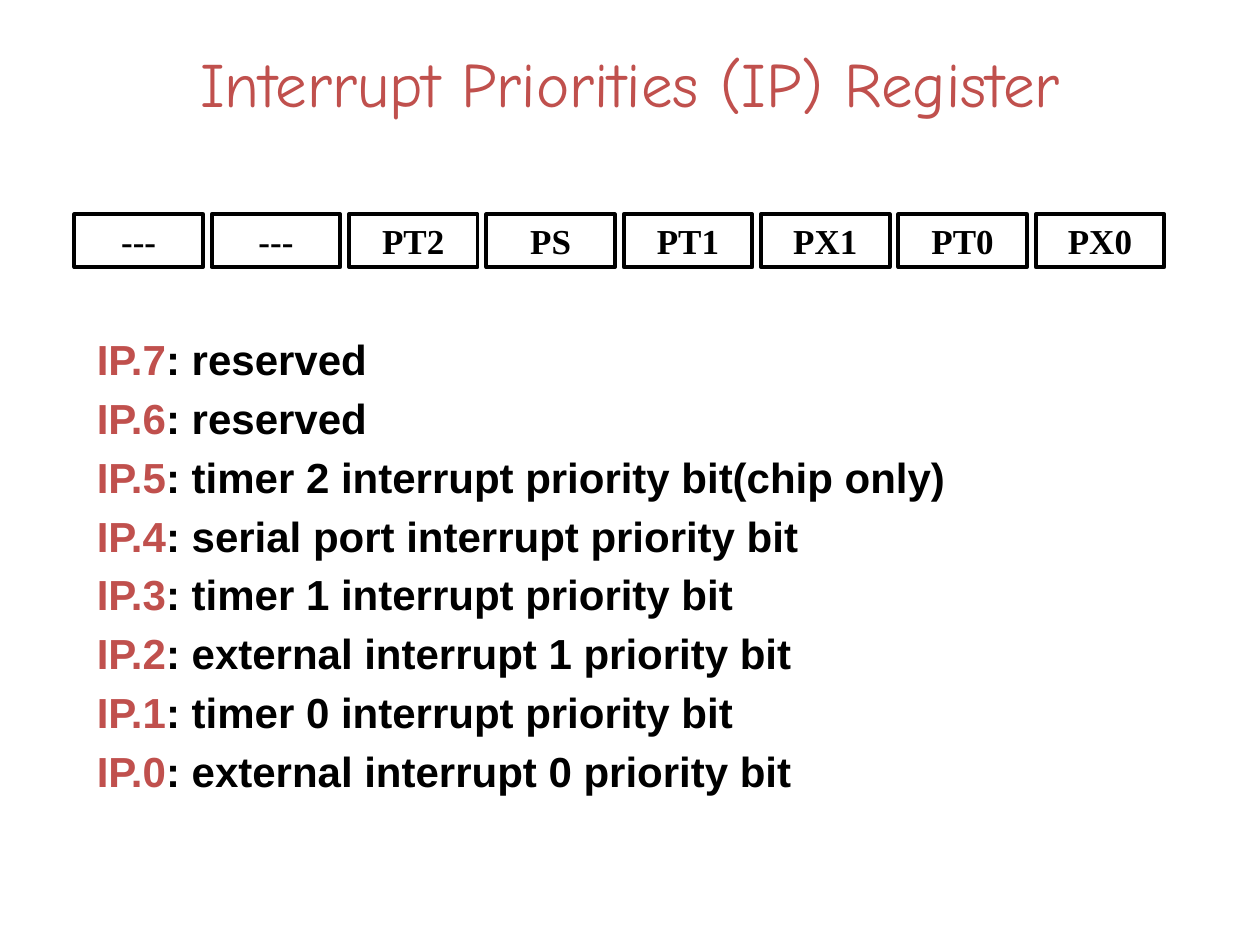
from lxml.etree import SubElement
from pptx import Presentation
from pptx.dml.color import RGBColor
from pptx.enum.shapes import MSO_SHAPE as Shape
from pptx.enum.text import MSO_ANCHOR as Anchor, PP_ALIGN as Align
from pptx.oxml.ns import qn
from pptx.util import Inches, Pt

# Content
TITLE = "Interrupt Priorities (IP) Register"
BITS = [  # from bit 7 down to bit 0: name, meaning
    ("---", "reserved"),
    ("---", "reserved"),
    ("PT2", "timer 2 interrupt priority bit(chip only)"),
    ("PS", "serial port interrupt priority bit"),
    ("PT1", "timer 1 interrupt priority bit"),
    ("PX1", "external interrupt 1 priority bit"),
    ("PT0", "timer 0 interrupt priority bit"),
    ("PX0", "external interrupt 0 priority bit"),
]

# Formats
COLORS = {"accent": "C0504D", "black": "000000"}
FONTS = {
    "title": {"name": "Comic Neue", "size": Pt(36), "bold": False},
    "bit": {"name": "Times New Roman", "size": Pt(20), "bold": True},
    "meaning": {"name": "Arial", "size": Pt(24), "bold": True},
}
CELL_LEFT, CELL_TOP, CELL_W, CELL_H, CELL_STEP = 0.59, 1.7, 1.02, 0.42, 1.09


def color(name):
    return RGBColor.from_string(COLORS[name])


def add_run(p, text, font, color_name):
    r = p.add_run()
    r.text = text
    for key, value in FONTS[font].items():
        setattr(r.font, key, value)
    r.font.color.rgb = color(color_name)


def space_before(p, percent):
    """Spacing relative to the line height."""
    pPr = p._p.get_or_add_pPr()
    SubElement(SubElement(pPr, qn("a:spcBef")), qn("a:spcPct")).set("val", str(percent * 1000))


def add_text_frame(slide, *box):
    tf = slide.shapes.add_textbox(*map(Inches, box)).text_frame
    tf.word_wrap = True
    return tf


prs = Presentation()
prs.slide_width, prs.slide_height = Inches(10), Inches(7.5)
slide = prs.slides.add_slide(prs.slide_layouts[6])

# Title
p = add_text_frame(slide, 0.5, 0.3, 9, 1.25).paragraphs[0]
p.alignment = Align.CENTER
add_run(p, TITLE, "title", "accent")

# Meaning of each bit
tf = add_text_frame(slide, 0.67, 2.6, 8.5, 5.08)
for i, (_, meaning) in enumerate(BITS):
    p = tf.add_paragraph() if i else tf.paragraphs[0]
    pPr = p._p.get_or_add_pPr()
    pPr.set("marL", str(Inches(0.38)))
    pPr.set("indent", str(Inches(-0.38)))
    space_before(p, 20)
    add_run(p, f"IP.{len(BITS) - 1 - i}", "meaning", "accent")
    add_run(p, f": {meaning}", "meaning", "black")

# Register cells
register = slide.shapes.add_group_shape()
for i, (name, _) in enumerate(BITS):
    box = (CELL_LEFT + i * CELL_STEP, CELL_TOP, CELL_W, CELL_H)
    s = register.shapes.add_shape(Shape.RECTANGLE, *map(Inches, box))
    s.shadow.inherit = False
    s.fill.background()
    s.line.color.rgb = color("black")
    s.line.width = Pt(2.25)
    tf = s.text_frame
    tf.word_wrap = False
    tf.vertical_anchor = Anchor.MIDDLE
    tf.margin_left = tf.margin_right = 0
    tf.margin_top = tf.margin_bottom = Inches(0.01)
    p = tf.paragraphs[0]
    p.alignment = Align.CENTER
    space_before(p, 50)
    add_run(p, name, "bit", "black")

prs.save("out.pptx")
